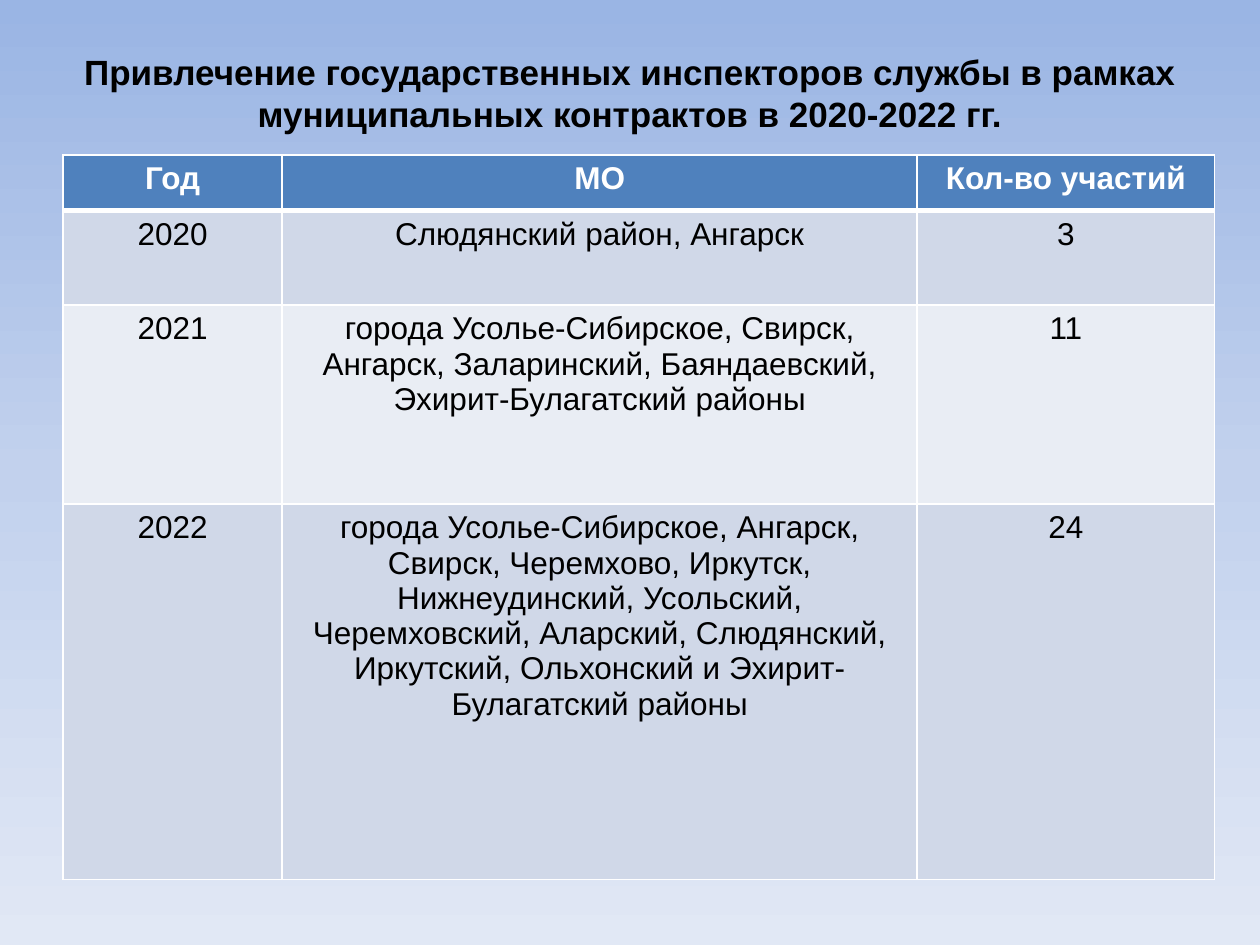
"""Build the slide on inspectors' work under municipal contracts, 2020-2022."""
from copy import deepcopy
from lxml.etree import SubElement as Sub
from pptx import Presentation
from pptx.dml.color import RGBColor as Rgb
from pptx.enum.text import MSO_ANCHOR as Anchor, PP_ALIGN as Align
from pptx.oxml.ns import qn
from pptx.util import Inches, Pt

HUES = {
    "top": "9AB5E4", "mid": "C2D1ED", "low": "E1E8F5",
    "head": "4F81BD", "dark": "D0D8E8", "light": "E9EDF4",
    "white": "FFFFFF", "black": "000000",
}


def write(frame, text, size=18, hue="black", bold=False):
    frame.word_wrap = True
    para = frame.paragraphs[0]
    para.alignment = Align.CENTER
    run = para.add_run()
    run.text = text
    font = run.font
    font.name, font.size, font.bold = "Arial", Pt(size), bold
    font.color.rgb = Rgb.from_string(HUES[hue])


def edge(cell, side, width):
    line = Sub(cell._tc.get_or_add_tcPr(), qn(f"a:ln{side}"), w=str(Pt(width)))
    fill = Sub(line, qn("a:solidFill"))
    Sub(fill, qn("a:srgbClr"), val=HUES["white"])


deck = Presentation()
deck.slide_width, deck.slide_height = Inches(10), Inches(7.5)
slide = deck.slides.add_slide(deck.slide_layouts[6])

back = slide.background.fill
back.gradient()
back.gradient_angle = 270
stops = slide.element.find(".//" + qn("a:gsLst"))
stops.insert(1, deepcopy(stops[0]))
stops[1].set("pos", "50000")
for stop, hue in zip(back.gradient_stops, ("top", "mid", "low")):
    stop.color.rgb = Rgb.from_string(HUES[hue])

title = slide.shapes.add_textbox(Inches(0.5), Inches(0), Inches(9), Inches(1.47))
title.text_frame.vertical_anchor = Anchor.MIDDLE
write(title.text_frame,
      "Привлечение государственных инспекторов службы в рамках "
      "муниципальных контрактов в 2020-2022 гг.", size=20, bold=True)

rows = [
    ("Год", "МО", "Кол-во участий"),
    ("2020", "Слюдянский район, Ангарск", "3"),
    ("2021", "города Усолье-Сибирское, Свирск, Ангарск, Заларинский, "
     "Баяндаевский, Эхирит-Булагатский районы", "11"),
    ("2022", "города Усолье-Сибирское, Ангарск, Свирск, Черемхово, Иркутск, "
     "Нижнеудинский, Усольский, Черемховский, Аларский, Слюдянский, "
     "Иркутский, Ольхонский и Эхирит-Булагатский районы", "24"),
]
wide = (1.74, 5.04, 2.36)
high = (0.44, 0.75, 1.58, 2.98)
grid = slide.shapes.add_table(
    len(rows), len(wide), Inches(0.5), Inches(1.23),
    Inches(sum(wide)), Inches(sum(high))).table
for col, width in zip(grid.columns, wide):
    col.width = Inches(width)
for row, height in zip(grid.rows, high):
    row.height = Inches(height)

for r, row in enumerate(rows):
    head = r == 0
    band = "head" if head else "dark" if r % 2 else "light"
    for c, text in enumerate(row):
        cell = grid.cell(r, c)
        for side in "LRTB":
            edge(cell, side, 3 if (r, side) in ((0, "B"), (1, "T")) else 1)
        cell.fill.solid()
        cell.fill.fore_color.rgb = Rgb.from_string(HUES[band])
        write(cell.text_frame, text, hue="white" if head else "black", bold=head)

deck.save("out.pptx")
